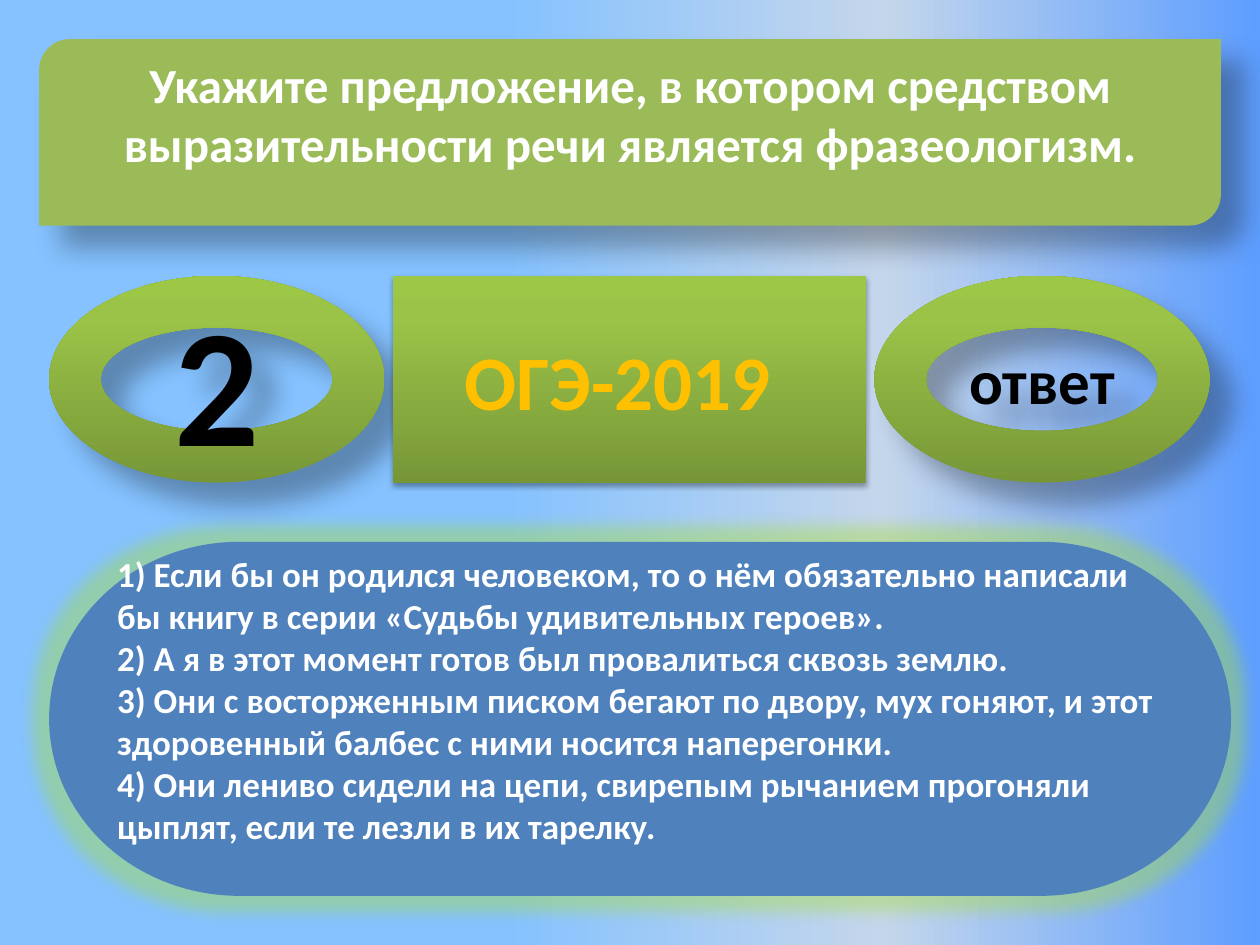
"""Build the quiz slide: question, number, exam label, answer button and four options."""
from pptx import Presentation, util as u
from pptx.dml.color import RGBColor
from pptx.enum import shapes, text
from pptx.oxml import ns, parse_xml

WHITE = RGBColor(0xFF, 0xFF, 0xFF)
BLACK = RGBColor(0x00, 0x00, 0x00)
GOLD = RGBColor(0xFF, 0xC0, 0x00)
OLIVE = RGBColor(0x9B, 0xBB, 0x59)
BLUE = RGBColor(0x4F, 0x81, 0xBD)
GLOW = RGBColor(0xA7, 0xDF, 0x34)
SKY = [(40, RGBColor(0x85, 0xC2, 0xFF)), (70, RGBColor(0xC4, 0xD6, 0xEB)),
       (100, RGBColor(0x5E, 0x9E, 0xFF))]
LIME = [(0, RGBColor(0x77, 0x97, 0x37)), (80, RGBColor(0x9B, 0xC3, 0x48)),
        (100, RGBColor(0x9D, 0xC7, 0x46))]
LEFT, CENTER = text.PP_ALIGN.LEFT, text.PP_ALIGN.CENTER
FLOAT = ("outerShdw", BLACK, 30, dict(blurRad=u.Pt(15), dist=u.Pt(18), dir=45 * 60000))
DROP = ("outerShdw", BLACK, 35, dict(blurRad=u.Pt(3.1), dist=u.Pt(1.8), dir=90 * 60000))
HALO = ("glow", GLOW, 40, dict(rad=u.Pt(18)))


def paint(part, color, effect):
    part.line.fill.background()
    part.shadow.inherit = False
    if isinstance(color, list):
        part.fill.gradient()
        part.fill.gradient_angle = 90
    else:
        part.fill.solid()
        part.fill.fore_color.rgb = color
    tag, tint, opacity, measures = effect
    attributes = " ".join(f'{key}="{int(value)}"' for key, value in measures.items())
    next(part.element.iter(ns.qn("a:effectLst"))).append(parse_xml(
        f'<a:{tag} {ns.nsdecls("a")} {attributes}><a:srgbClr val="{tint}">'
        f'<a:alpha val="{opacity * 1000}"/></a:srgbClr></a:{tag}>'))


def write(part, lines, size, color, align, bottom=0.05):
    frame = part.text_frame
    frame.text = "\n".join(lines)
    frame.word_wrap = True
    frame.auto_size = text.MSO_AUTO_SIZE.NONE
    frame.vertical_anchor = text.MSO_ANCHOR.MIDDLE
    frame.margin_bottom = u.Inches(bottom)
    for paragraph in frame.paragraphs:
        paragraph.alignment = align
        for run in paragraph.runs:
            run.font.name = "Calibri"
            run.font.size = u.Pt(size)
            run.font.bold = True
            run.font.color.rgb = color


deck = Presentation()
deck.slide_width, deck.slide_height = u.Inches(10), u.Inches(7.5)
slide = deck.slides.add_slide(deck.slide_layouts[5])
slide.background.fill.gradient()
slide.background.fill.gradient_angle = 0

question = slide.shapes.title
question.left = question.top = u.Inches(0.31)
question.width, question.height = u.Inches(9.38), u.Inches(1.48)
banner = slide.shapes.add_shape(
    shapes.MSO_SHAPE.ROUND_2_DIAG_RECTANGLE,
    question.left, question.top, question.width, question.height)
paint(banner, OLIVE, FLOAT)
banner.element.addnext(question.element)
write(question,
      ["Укажите предложение, в котором средством выразительности речи является фразеологизм."],
      28, WHITE, CENTER, 0.35)

MARGIN, GAP, ROW_TOP, ROW_HEIGHT = 0.39, 0.07, 2.19, 1.64
DONUT, PROCESS = shapes.MSO_SHAPE.DONUT, shapes.MSO_SHAPE.FLOWCHART_PREDEFINED_PROCESS
row = [(DONUT, 2.66, FLOAT, "2", 96, BLACK, CENTER),
       (PROCESS, 3.75, DROP, "ОГЭ-2019", 44, GOLD, LEFT),
       (DONUT, 2.66, FLOAT, "ответ", 36, BLACK, CENTER)]
left = MARGIN
for kind, width, effect, label, size, color, align in row:
    button = slide.shapes.add_shape(
        kind, u.Inches(left), u.Inches(ROW_TOP), u.Inches(width), u.Inches(ROW_HEIGHT))
    paint(button, LIME, effect)
    write(button, [label], size, color, align)
    left += width + GAP

options = slide.shapes.add_shape(
    shapes.MSO_SHAPE.FLOWCHART_TERMINATOR,
    u.Inches(MARGIN), u.Inches(4.3), u.Inches(9.38), u.Inches(2.81))
paint(options, BLUE, HALO)
write(options, [
    "1) Если бы он родился человеком, то о нём обязательно написали бы книгу "
    "в серии «Судьбы удивительных героев».",
    "2) А я в этот момент готов был провалиться сквозь землю.",
    "3) Они с восторженным писком бегают по двору, мух гоняют, и этот здоровенный "
    "балбес с ними носится наперегонки.",
    "4) Они лениво сидели на цепи, свирепым рычанием прогоняли цыплят, "
    "если те лезли в их тарелку.",
], 20, WHITE, LEFT, 0.35)

for stop_list in slide.element.iter(ns.qn("a:gsLst")):
    in_background = stop_list.getparent().getparent().tag == ns.qn("p:bgPr")
    for default in list(stop_list):
        stop_list.remove(default)
    for share, color in SKY if in_background else LIME:
        stop_list.append(parse_xml(
            f'<a:gs {ns.nsdecls("a")} pos="{share * 1000}"><a:srgbClr val="{color}"/></a:gs>'))

deck.save("out.pptx")
